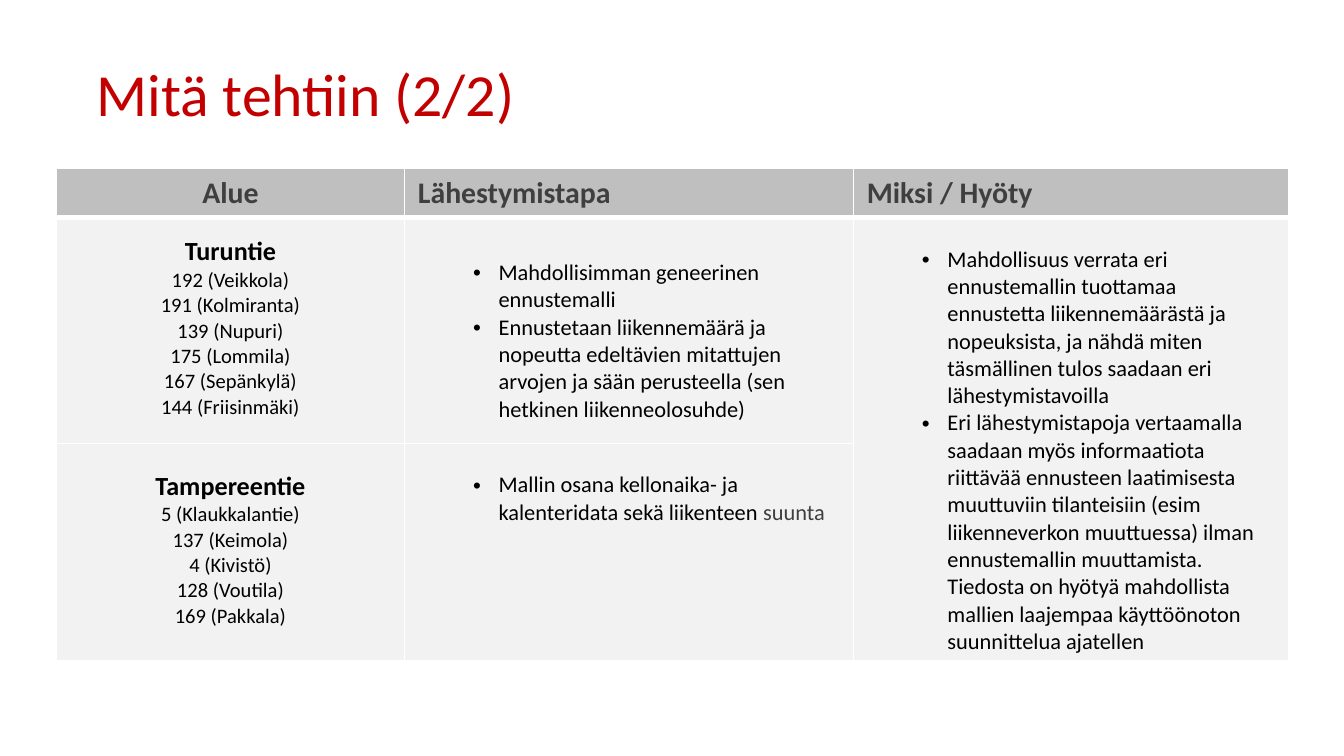
from lxml import etree
from pptx import Presentation
from pptx.dml.color import RGBColor
from pptx.enum.text import MSO_ANCHOR, PP_ALIGN
from pptx.oxml.ns import qn
from pptx.util import Inches, Pt

TOP, MIDDLE = MSO_ANCHOR.TOP, MSO_ANCHOR.MIDDLE
LEFT, CENTER = PP_ALIGN.LEFT, PP_ALIGN.CENTER
RED, GREY, BLACK = "C30000", "3F3F3F", "000000"
HEADER_FILL, BODY_FILL = "BFBFBF", "F2F2F2"

prs = Presentation()
prs.slide_width = Inches(10)
prs.slide_height = prs.slide_width * 9 // 16
s = prs.slides.add_slide(prs.slide_layouts[6])
U = prs.slide_width // 10  # lengths are tenths of the slide width


def write(p, text, size, color, bold=False):
    r = p.add_run()
    r.text = text
    fmt = {"name": "Calibri", "size": Pt(size), "bold": bold}
    for key, value in fmt.items():
        setattr(r.font, key, value)
    r.font.color.rgb = RGBColor.from_string(color)


def style_cell(cell, fill, anchor, margins, bottom=1):
    for side, width in {"L": 1, "R": 1, "T": 1, "B": bottom}.items():
        ln = etree.SubElement(cell._tc.get_or_add_tcPr(), qn("a:ln" + side), w=str(Pt(width)))
        solid = etree.SubElement(ln, qn("a:solidFill"))
        etree.SubElement(solid, qn("a:srgbClr"), val="FFFFFF")
    cell.fill.solid()
    cell.fill.fore_color.rgb = RGBColor.from_string(fill)
    cell.vertical_anchor = anchor
    for side, value in zip(("left", "top", "right", "bottom"), margins):
        setattr(cell, "margin_" + side, int(value * U))


# Title
box = [int(v * U) for v in (0.62, 0.38, 8.76, 0.63)]
tf = s.shapes.add_textbox(*box).text_frame
tf.word_wrap = True
p = tf.paragraphs[0]
p.line_spacing = Pt(38)
write(p, "Mitä tehtiin (2/2)", 32, RED)

# Table grid
cols, rows = (2.59, 3.34, 3.24), (0.37, 1.68, 1.62)
box = [int(v * U) for v in (0.42, 1.25, sum(cols), sum(rows))]
table = s.shapes.add_table(len(rows), len(cols), *box).table
for col, width in zip(table.columns, cols):
    col.width = int(width * U)
for row, height in zip(table.rows, rows):
    row.height = int(height * U)

# Header row
headers = {"Alue": CENTER, "Lähestymistapa": LEFT, "Miksi / Hyöty": LEFT}
for i, (text, align) in enumerate(headers.items()):
    cell = table.cell(0, i)
    style_cell(cell, HEADER_FILL, TOP, (0.1, 0.05, 0.1, 0.05), bottom=3)
    p = cell.text_frame.paragraphs[0]
    p.alignment = align
    write(p, text, 16, GREY, True)

# Roads with their measuring stations
roads = [
    ["Turuntie", "192 (Veikkola)", "191 (Kolmiranta)", "139 (Nupuri)",
     "175 (Lommila)", "167 (Sepänkylä)", "144 (Friisinmäki)"],
    ["Tampereentie", "5 (Klaukkalantie)", "137 (Keimola)", "4 (Kivistö)",
     "128 (Voutila)", "169 (Pakkala)"],
]
for i, lines in enumerate(roads, 1):
    cell = table.cell(i, 0)
    style_cell(cell, BODY_FILL, MIDDLE, (0.01, 0.01, 0.01, 0.05))
    tf = cell.text_frame
    for j, text in enumerate(lines):
        p = tf.add_paragraph() if j else tf.paragraphs[0]
        p.alignment = CENTER
        write(p, text, 11 if j else 14, BLACK, j == 0)

# Bulleted cells: row, column, anchor, right margin, bullets as (text, color) runs
table.cell(1, 2).merge(table.cell(2, 2))
bulleted = [
    (1, 1, MIDDLE, 0.12, [
        [("Mahdollisimman geneerinen ennustemalli", BLACK)],
        [("Ennustetaan liikennemäärä ja nopeutta edeltävien mitattujen arvojen ja sään "
          "perusteella (sen hetkinen liikenneolosuhde)", BLACK)]]),
    (2, 1, TOP, 0.12, [
        [("Mallin osana kellonaika- ja kalenteridata sekä liikenteen ", BLACK),
         ("suunta", GREY)]]),
    (1, 2, TOP, 0.16, [
        [("Mahdollisuus verrata eri ennustemallin tuottamaa ennustetta liikennemäärästä ja "
          "nopeuksista, ja nähdä miten täsmällinen tulos saadaan eri lähestymistavoilla", BLACK)],
        [("Eri lähestymistapoja vertaamalla saadaan myös informaatiota riittävää ennusteen "
          "laatimisesta muuttuviin tilanteisiin (esim liikenneverkon muuttuessa) ilman "
          "ennustemallin muuttamista. Tiedosta on hyötyä mahdollista mallien laajempaa "
          "käyttöönoton suunnittelua ajatellen", BLACK)]]),
]
for row, col, anchor, right, bullets in bulleted:
    cell = table.cell(row, col)
    style_cell(cell, BODY_FILL, anchor, (0.01, 0.21, right, 0.05))
    tf = cell.text_frame
    for j, runs in enumerate(bullets):
        p = tf.add_paragraph() if j else tf.paragraphs[0]
        pPr = p._p.get_or_add_pPr()
        pPr.set("marL", str(int(0.69 * U)))
        pPr.set("indent", str(int(-0.19 * U)))
        etree.SubElement(pPr, qn("a:buFont"), typeface="Arial")
        etree.SubElement(pPr, qn("a:buChar"), char="•")
        for text, color in runs:
            write(p, text, 12, color)

prs.save("out.pptx")
